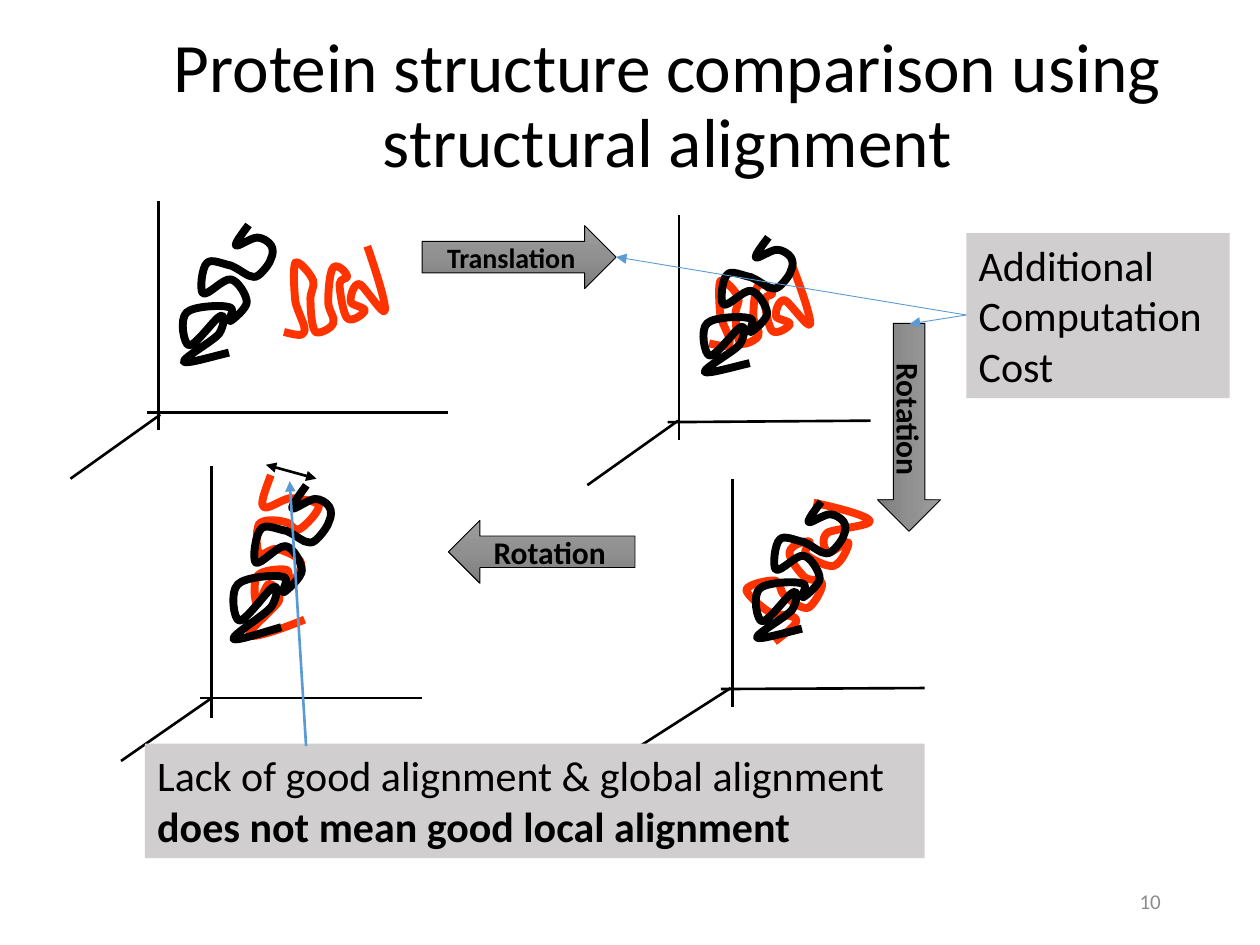
from copy import deepcopy
from math import cos, radians, sin

from lxml.etree import SubElement
from pptx import Presentation
from pptx.dml.color import RGBColor
from pptx.enum.shapes import MSO_CONNECTOR as Connector, MSO_SHAPE as Shape
from pptx.enum.text import MSO_ANCHOR as Anchor, MSO_AUTO_SIZE as AutoSize, PP_ALIGN as Align
from pptx.oxml.ns import qn
from pptx.util import Cm, Pt

BLACK, RED, BLUE, GREY = "000000", "FF3300", "5B9BD5", "D0CECE"
CHAIN_TURN = 207

MOVING_CHAIN = [
    (0, 15), (23, 7), (46, 0), (51, 1), (56, 2), (32, 17), (30, 21),
    (29, 26), (41, 29), (44, 28), (47, 28), (48, 17), (51, 17),
    (53, 17), (61, 27), (57, 31), (54, 34), (36, 37), (30, 37),
    (25, 37), (26, 30), (24, 31), (21, 31), (13, 39), (17, 42),
    (20, 45), (37, 46), (44, 46), (51, 46), (57, 40), (61, 42),
    (65, 43), (70, 53), (68, 56), (65, 59), (51, 60), (44, 60),
    (37, 61), (32, 56), (27, 58), (22, 60), (11, 69), (13, 72),
    (16, 74), (35, 73), (44, 72), (53, 70), (64, 63), (68, 65),
    (72, 66), (70, 73), (68, 81),
]
FIXED_CHAIN = [
    (37, 102), (20, 106), (3, 111), (1, 109), (0, 106), (24, 93), (29, 87),
    (33, 81), (34, 71), (30, 73), (26, 74), (10, 97), (5, 96),
    (1, 96), (-3, 75), (3, 70), (8, 65), (31, 64), (37, 66),
    (43, 67), (35, 77), (38, 77), (40, 76), (51, 67), (51, 62),
    (51, 57), (44, 45), (38, 44), (32, 43), (20, 57), (16, 55),
    (13, 53), (15, 34), (19, 31), (22, 27), (32, 32), (38, 33),
    (43, 35), (48, 39), (52, 41), (56, 42), (57, 43), (60, 41),
    (63, 39), (69, 32), (70, 28), (72, 24), (72, 20), (70, 17),
    (68, 14), (63, 11), (59, 11), (54, 11), (43, 19), (42, 17),
    (41, 15), (50, 4), (52, 1),
]

# Each stage: moving chain box, its turn, fixed chain box, three axes
STAGES = [
    ((5.84, 4.85, 1.83, 2.06), 90, (3.84, 4.45, 1.27, 3.07),
     [(3.2, 4.06, 3.2, 8.66), (2.97, 8.31, 9.04, 8.31), (3.23, 8.36, 1.42, 9.65)]),
    ((4.98, 9.68, 1.42, 3.28), 193.5, (4.9, 9.68, 1.32, 3.45),
     [(4.27, 9.4, 4.27, 14.48), (4.04, 14.07, 8.51, 14.07), (4.27, 14.07, 2.44, 15.34)]),
    ((14.5, 5.16, 1.65, 2.06), 90, (14.33, 4.7, 1.27, 3.02),
     [(13.69, 4.34, 13.69, 8.86), (13.46, 8.51, 17.55, 8.48), (13.67, 8.48, 11.84, 9.78)]),
    ((15.49, 9.8, 1.5, 3.12), 44.8, (15.39, 10.03, 1.27, 3.05),
     [(14.76, 9.65, 14.76, 14.25), (14.53, 13.89, 18.64, 13.87), (14.73, 13.87, 12.9, 15.04)]),
]


def color(value):
    """Turn a hex string into a colour."""
    return RGBColor.from_string(value)


def place(shape, box):
    """Set left, top, width and height in centimetres."""
    shape.left, shape.top, shape.width, shape.height = map(Cm, box)


def add_run(paragraph, text, size, bold=False, tint=BLACK):
    """Append one formatted run."""
    run = paragraph.add_run()
    run.text = text
    run.font.name, run.font.size, run.font.bold = "Calibri", Pt(size), bold
    run.font.color.rgb = color(tint)


def unturn(points, angle):
    """Turn points back by an angle in degrees."""
    c, s = cos(radians(angle)), sin(radians(angle))
    return [(x * c + y * s, y * c - x * s) for x, y in points]


def add_chain(slide, points, box, turn, tint):
    """Draw a protein chain as a run of cubic curves."""
    start, *rest = [(round(x * 1000), round(y * 1000)) for x, y in points]
    builder = slide.shapes.build_freeform(*start)
    builder.add_line_segments(rest, close=False)
    chain = builder.convert_to_shape()
    place(chain, box)
    chain.rotation = turn
    chain.shadow.inherit = False
    chain.fill.background()
    chain.line.color.rgb, chain.line.width = color(tint), Pt(4.5)
    outline = chain._element.find(".//" + qn("a:path"))
    steps = outline.findall(qn("a:lnTo"))
    for i in range(0, len(steps), 3):
        curve = SubElement(outline, qn("a:cubicBezTo"))
        for step in steps[i:i + 3]:
            curve.append(step[0])
            outline.remove(step)


def add_line(slide, ends, tint=BLACK, width=1.5, arrows=()):
    """Draw a straight line with optional arrowheads."""
    line = slide.shapes.add_connector(Connector.STRAIGHT, *map(Cm, ends))
    line.line.color.rgb, line.line.width = color(tint), Pt(width)
    for end in arrows:
        SubElement(line.line._get_or_add_ln(), qn(f"a:{end}"), type="triangle")
    SubElement(line._element.spPr, qn("a:effectLst"))


def add_step_arrow(slide, text, box, size, turn=0, flip=False):
    """Draw a shaded block arrow that names a step."""
    arrow = slide.shapes.add_shape(Shape.RIGHT_ARROW, *map(Cm, box))
    arrow.rotation = turn
    arrow.shadow.inherit = False
    if flip:
        arrow._element.spPr.xfrm.set("flipV", "1")
    arrow.fill.gradient()
    arrow.fill.gradient_angle = 270
    stop_list = arrow._element.find(".//" + qn("a:gsLst"))
    stop_list.append(deepcopy(stop_list[0]))
    shades = zip(arrow.fill.gradient_stops, (0, 0.5, 1), ("9D9D9D", "909090", "7C7C7C"))
    for stop, position, shade in shades:
        stop.position, stop.color.rgb = position, color(shade)
    arrow.line.color.rgb, arrow.line.width = color(BLACK), Pt(0.5)
    frame = arrow.text_frame
    frame.word_wrap, frame.vertical_anchor = False, Anchor.MIDDLE
    frame.paragraphs[0].alignment = Align.CENTER
    add_run(frame.paragraphs[0], text, size, bold=True)


def add_note(slide, box, paragraphs):
    """Add a grey note from paragraphs of (text, bold) runs."""
    note = slide.shapes.add_textbox(*map(Cm, box))
    note.fill.solid()
    note.fill.fore_color.rgb = color(GREY)
    frame = note.text_frame
    frame.word_wrap, frame.auto_size = True, AutoSize.SHAPE_TO_FIT_TEXT
    for i, runs in enumerate(paragraphs):
        paragraph = frame.add_paragraph() if i else frame.paragraphs[0]
        for text, bold in runs:
            add_run(paragraph, text, 24, bold)


def add_title(slide, text):
    """Place and format the title placeholder."""
    title = slide.shapes.title
    place(title, (2.51, 0.94, 21.89, 2.46))
    frame = title.text_frame
    frame.word_wrap, frame.auto_size = True, AutoSize.NONE
    frame.vertical_anchor = Anchor.MIDDLE
    paragraph = frame.paragraphs[0]
    paragraph.alignment, paragraph.line_spacing = Align.CENTER, 0.9
    add_run(paragraph, text, 39.6)


def add_page_number(slide, text):
    """Add the slide number at the lower right."""
    frame = slide.shapes.add_textbox(*map(Cm, (17.93, 17.65, 5.72, 1.02))).text_frame
    frame.word_wrap, frame.vertical_anchor = True, Anchor.MIDDLE
    frame.paragraphs[0].alignment = Align.RIGHT
    add_run(frame.paragraphs[0], text, 12, tint="8C8C8C")


def main():
    """Build the slide and save it."""
    deck = Presentation()
    deck.slide_width, deck.slide_height = Cm(25.4), Cm(19.05)
    slide = deck.slides.add_slide(deck.slide_layouts[5])
    add_step_arrow(slide, "Rotation", (16.23, 7.98, 4.19, 1.27), 18, turn=90)
    add_step_arrow(slide, "Translation", (8.51, 4.55, 3.91, 1.27), 16)
    add_step_arrow(slide, "Rotation", (9.04, 10.49, 3.76, 1.27), 18, turn=180, flip=True)
    add_title(slide, "Protein structure comparison using structural alignment")
    add_page_number(slide, "10")
    fixed_points = unturn(FIXED_CHAIN, CHAIN_TURN)
    for moving_box, turn, fixed_box, axes in STAGES:
        add_chain(slide, MOVING_CHAIN, moving_box, turn, RED)
        add_chain(slide, fixed_points, fixed_box, CHAIN_TURN, BLACK)
        for axis in axes:
            add_line(slide, axis)
    add_note(slide, (19.48, 4.7, 5.31, 3.33),
             [[("Additional", False)], [("Computation Cost", False)]])
    for tip in ((12.42, 5.18), (18.34, 6.53)):
        add_line(slide, (19.48, 6.35, *tip), BLUE, 0.5, ["tailEnd"])
    add_note(slide, (2.92, 14.99, 15.72, 2.31),
             [[("Lack of good alignment & global alignment ", False),
               ("does not mean good local alignment", True)]])
    add_line(slide, (6.17, 15.04, 5.84, 9.7), BLUE, 1.5, ["tailEnd"])
    add_line(slide, (5.36, 9.37, 6.38, 9.65), arrows=["headEnd", "tailEnd"])
    deck.save("out.pptx")


if __name__ == "__main__":
    main()
